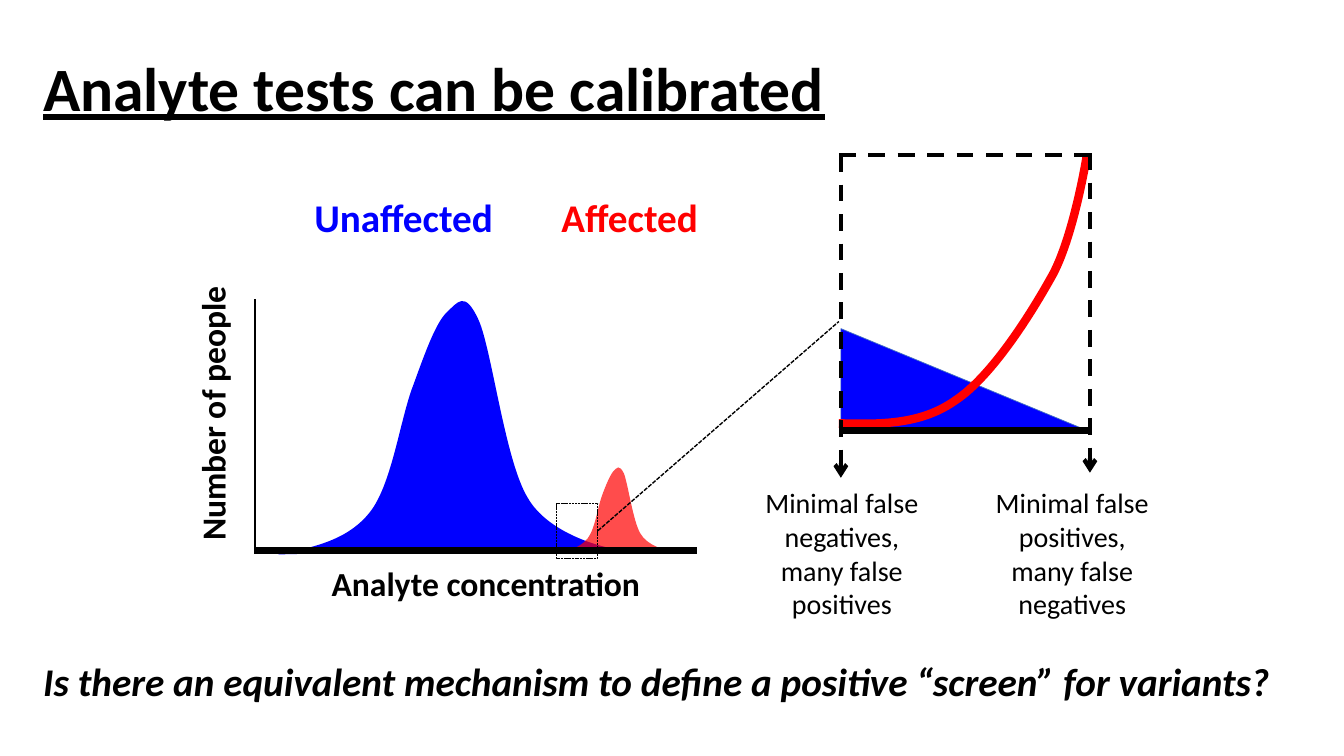
from lxml import etree
from pptx import Presentation
from pptx.dml.color import RGBColor
from pptx.enum.dml import MSO_LINE
from pptx.enum.shapes import MSO_CONNECTOR, MSO_SHAPE
from pptx.enum.text import MSO_ANCHOR, PP_ALIGN
from pptx.oxml.ns import qn
from pptx.util import Pt

PX = 9144
BLACK = RGBColor(0x00, 0x00, 0x00)
BLUE = RGBColor(0x00, 0x00, 0xFF)
RED = RGBColor(0xFF, 0x00, 0x00)
EDGE = RGBColor(0x44, 0x72, 0xC4)
STRAIGHT = MSO_CONNECTOR.STRAIGHT
DASH, SYS_DASH = MSO_LINE.DASH, MSO_LINE.SQUARE_DOT
LEFT, CENTER = PP_ALIGN.LEFT, PP_ALIGN.CENTER
TOP, MIDDLE = MSO_ANCHOR.TOP, MSO_ANCHOR.MIDDLE

prs = Presentation()
prs.slide_width, prs.slide_height = 1333 * PX, 750 * PX
s = prs.slides.add_slide(prs.slide_layouts[6])


def add_text(text, x, y, w, h, size, color=BLACK, bold=True, italic=False,
             underline=False, align=LEFT, anchor=TOP, wrap=True, rotation=0, spacing=1.0):
    sp = s.shapes.add_textbox(x * PX, y * PX, w * PX, h * PX)
    sp.rotation = rotation
    tf = sp.text_frame
    tf.word_wrap = wrap
    tf.vertical_anchor = anchor
    p = tf.paragraphs[0]
    p.alignment = align
    p.line_spacing = spacing
    r = p.add_run()
    r.text = text
    r.font.name, r.font.size = "Calibri", Pt(size)
    r.font.bold, r.font.italic, r.font.underline = bold, italic, underline
    r.font.color.rgb = color


def add_line(x1, y1, x2, y2, width, dash=None, arrow=False):
    line = s.shapes.add_connector(STRAIGHT, x1 * PX, y1 * PX, x2 * PX, y2 * PX)
    line.line.color.rgb = BLACK
    line.line.width = Pt(width)
    if dash:
        line.line.dash_style = dash
    if arrow:
        etree.SubElement(line.line._get_or_add_ln(), qn("a:tailEnd"), type="arrow")
    etree.SubElement(line._element.spPr, qn("a:effectLst"))
    return line


triangle = s.shapes.add_shape(MSO_SHAPE.RIGHT_TRIANGLE, 834 * PX, 326 * PX, 244 * PX, 101 * PX)
triangle.shadow.inherit = False
triangle.fill.solid()
triangle.fill.fore_color.rgb = BLUE
triangle.line.color.rgb = EDGE
triangle.line.width = Pt(0.5)

unaffected = [(276, 550), (311, 543), (345, 536), (367, 508), (389, 480), (397, 415), (410, 382),
              (422, 349), (432, 321), (443, 310), (454, 300), (461, 287), (475, 318),
              (488, 348), (501, 456), (523, 493), (544, 531), (602, 543), (602, 543)]
affected = [(552, 548), (564, 546), (575, 544), (583, 534), (590, 525), (593, 503), (597, 492),
            (601, 481), (605, 472), (608, 468), (612, 464), (614, 460), (619, 470),
            (623, 481), (628, 517), (635, 529), (642, 542), (662, 546), (662, 546)]
affected_zoom = [(832, 420), (872, 421), (913, 422), (948, 397), (984, 373),
                 (1023, 311), (1045, 271), (1066, 230), (1078, 154), (1078, 154)]

for curve, (left, top, right, bottom), color, opacity, filled in (
        (unaffected, (276, 299, 602, 550), BLUE, 100, True),
        (affected, (552, 464, 662, 548), RED, 70, True),
        (affected_zoom, (832, 154, 1078, 420), RED, 100, False)):
    builder = s.shapes.build_freeform(left, top, scale=PX)
    builder.add_line_segments([(right, bottom)], close=False)
    sp = builder.convert_to_shape()
    outline = next(sp._element.iter(qn("a:path")))
    for child in list(outline):
        outline.remove(child)
    commands = [("a:moveTo", curve[:1])]
    commands += [("a:cubicBezTo", curve[i:i + 3]) for i in range(1, len(curve), 3)]
    for tag, points in commands:
        command = etree.SubElement(outline, qn(tag))
        for x, y in points:
            etree.SubElement(command, qn("a:pt"), x=str(x - left), y=str(y - top))
    sp.shadow.inherit = False
    if filled:
        sp.fill.solid()
        sp.fill.fore_color.rgb = color
        sp.line.fill.background()
        if opacity < 100:
            clr = sp._element.spPr.find(qn("a:solidFill"))[0]
            etree.SubElement(clr, qn("a:alpha"), val=str(opacity * 1000))
    else:
        sp.fill.background()
        sp.line.color.rgb = color
        sp.line.width = Pt(6)

add_line(253, 297, 253, 548, 1)
add_line(691, 546, 252, 546, 4.5)
add_line(1083, 427, 834, 427, 4.5)

overlap = s.shapes.add_shape(MSO_SHAPE.RECTANGLE, 552 * PX, 499 * PX, 41 * PX, 55 * PX)
overlap.shadow.inherit = False
overlap.fill.background()
overlap.line.color.rgb = BLACK
overlap.line.width = Pt(0.5)
overlap.line.dash_style = SYS_DASH

add_line(593, 526, 832, 319, 1, SYS_DASH).begin_connect(overlap, 3)
add_line(832, 154, 1080, 154, 3, DASH)
add_line(834, 154, 834, 474, 3, DASH, arrow=True)
add_line(1081, 152, 1081, 469, 3, DASH, arrow=True)

add_text("Unaffected", 302, 187, 201, 57, 28, color=BLUE, wrap=False)
add_text("Affected", 547, 187, 158, 57, 28, color=RED, wrap=False)
add_text("Number of people", 73, 384, 275, 50, 24, wrap=False, rotation=270)
add_text("Analyte concentration", 319, 554, 331, 50, 24, wrap=False)
add_text("Minimal false negatives, many false positives", 745, 477, 180, 145, 20,
         bold=False, align=CENTER)
add_text("Minimal false positives, many false negatives", 972, 477, 183, 145, 20,
         bold=False, align=CENTER)
add_text("Analyte tests can be calibrated", 33, 18, 1282, 145, 44,
         underline=True, anchor=MIDDLE, spacing=0.9)
add_text("Is there an equivalent mechanism to define a positive “screen” for variants?",
         33, 647, 1282, 57, 28, italic=True)

prs.save("out.pptx")
